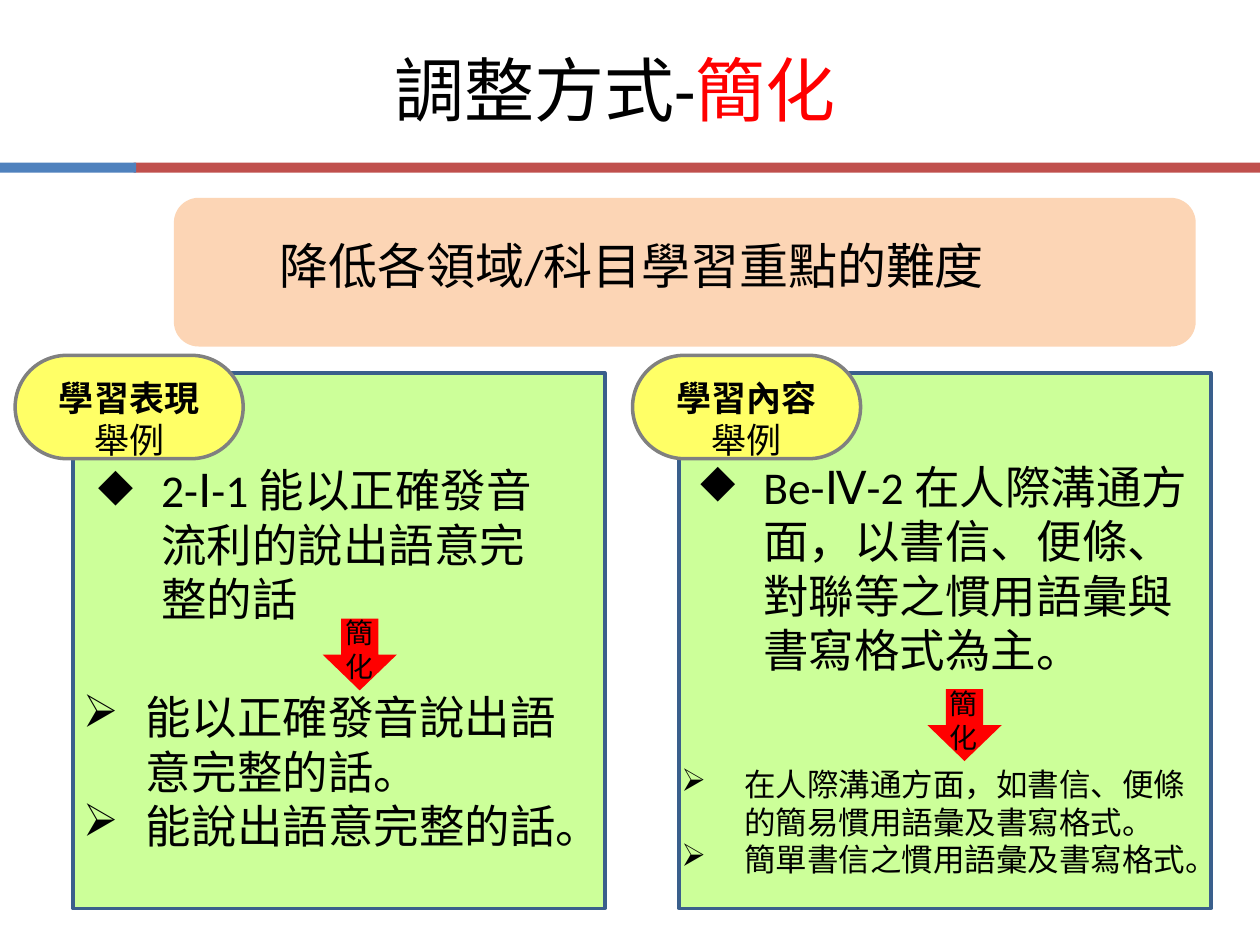
from pptx import Presentation
from pptx.dml.color import RGBColor
from pptx.enum.shapes import MSO_SHAPE
from pptx.enum.text import MSO_ANCHOR, PP_ALIGN
from pptx.oxml.ns import qn
from pptx.util import Inches, Pt
from lxml.etree import SubElement

LATIN, CJK = "Calibri", "Noto Sans CJK SC"
COLORS = {
    "black": "000000", "red": "FF0000", "bar": "C0504D", "accent": "4F81BD",
    "peach": "FCD5B5", "green": "CCFF99", "edge": "3A5F8C",
    "yellow": "FFFF66", "gray": "808080",
}
TITLE = [("調整方式-", {}), ("簡化", {"color": "red"})]
SUMMARY = "降低各領域/科目學習重點的難度"
ARROW_LABEL = "簡化"
CARD_TOP, CARD_W, CARD_H = 2.96, 4.22, 4.25
PILL_TOP, PILL_W, PILL_H = 2.82, 1.81, 0.82
ARROW_W, ARROW_H = 0.59, 0.57

PANELS = [
    {
        "card_x": 0.58, "pill_x": 0.12, "label": "學習表現",
        "arrow": (2.56, 4.91),
        "lists": [
            ((0.24, 3.62, 4.37, 1.72), "◆", 26,
             ["2-Ⅰ-1 能以正確發音流利的說出語意完整的話"]),
            ((0.12, 5.42, 4.69, 1.72), "➢", 26,
             ["能以正確發音說出語意完整的話。", "能說出語意完整的話。"]),
        ],
    },
    {
        "card_x": 5.39, "pill_x": 5.02, "label": "學習內容",
        "arrow": (7.36, 5.47),
        "lists": [
            ((5.02, 3.59, 4.71, 2.15), "◆", 26,
             ["Be-Ⅳ-2 在人際溝通方面，以書信、便條、對聯等之慣用語彙與書寫格式為主。"]),
            ((4.87, 6.02, 4.69, 1.31), "➢", 18,
             ["在人際溝通方面，如書信、便條的簡易慣用語彙及書寫格式。",
              "簡單書信之慣用語彙及書寫格式。"]),
        ],
    },
]


def rgb(name):
    return RGBColor.from_string(COLORS[name])


def add_box(s, kind, box, fill, line=None):
    sp = s.shapes.add_shape(kind, *map(Inches, box))
    sp.shadow.inherit = False
    sp.fill.solid()
    sp.fill.fore_color.rgb = rgb(fill)
    if line:
        sp.line.color.rgb = rgb(line)
        sp.line.width = Pt(2)
    else:
        sp.line.fill.background()
    return sp


def set_bullet(p, char):
    p.level = 1
    pPr = p._p.get_or_add_pPr()
    pPr.set("marL", str(Inches(0.94)))
    pPr.set("indent", str(Inches(-0.5)))
    SubElement(pPr, qn("a:buChar")).set("char", char)


def write(tf, paragraphs, size, align=PP_ALIGN.LEFT, bullet=None):
    tf.word_wrap = True
    tf.vertical_anchor = MSO_ANCHOR.TOP
    for i, runs in enumerate(paragraphs):
        p = tf.paragraphs[0] if i == 0 else tf.add_paragraph()
        p.alignment = align
        if bullet:
            set_bullet(p, bullet)
        for text, style in runs:
            r = p.add_run()
            r.text = text
            font = {"name": LATIN, "size": Pt(size), "bold": style.get("bold", False)}
            for key, value in font.items():
                setattr(r.font, key, value)
            r.font.color.rgb = rgb(style.get("color", "black"))
            SubElement(r.font._element, qn("a:ea")).set("typeface", CJK)


def add_text(s, box, paragraphs, size, **options):
    sp = s.shapes.add_textbox(*map(Inches, box))
    write(sp.text_frame, paragraphs, size, **options)


def add_panel(s, panel):
    add_box(s, MSO_SHAPE.RECTANGLE, (panel["card_x"], CARD_TOP, CARD_W, CARD_H),
            "green", "edge")
    pill = add_box(s, MSO_SHAPE.ROUNDED_RECTANGLE,
                   (panel["pill_x"], PILL_TOP, PILL_W, PILL_H), "yellow", "gray")
    pill.adjustments[0] = 0.5
    write(pill.text_frame, [[(panel["label"], {"bold": True}), ("舉例", {})]],
          20, PP_ALIGN.CENTER)
    for box, bullet, size, items in panel["lists"]:
        add_text(s, box, [[(item, {})] for item in items], size, bullet=bullet)
    x, y = panel["arrow"]
    add_box(s, MSO_SHAPE.DOWN_ARROW, (x, y, ARROW_W, ARROW_H), "red")
    add_text(s, (x + 0.08, y - 0.07, 0.35, 0.64), [[(ARROW_LABEL, {})]], 16)


def main():
    prs = Presentation()
    prs.slide_width, prs.slide_height = Inches(10), Inches(7.5)
    s = prs.slides.add_slide(prs.slide_layouts[6])
    add_box(s, MSO_SHAPE.RECTANGLE, (1.06, 1.29, 8.98, 0.08), "bar")
    add_box(s, MSO_SHAPE.RECTANGLE, (0, 1.29, 1.08, 0.08), "accent")
    add_text(s, (-0.12, 0.32, 10, 0.77), [TITLE], 40, align=PP_ALIGN.CENTER)
    add_box(s, MSO_SHAPE.ROUNDED_RECTANGLE, (1.38, 1.57, 8.11, 1.18), "peach")
    add_text(s, (1.09, 1.82, 7.85, 0.57), [[(SUMMARY, {})]], 28,
             align=PP_ALIGN.CENTER)
    for panel in PANELS:
        add_panel(s, panel)
    prs.save("out.pptx")


if __name__ == "__main__":
    main()
